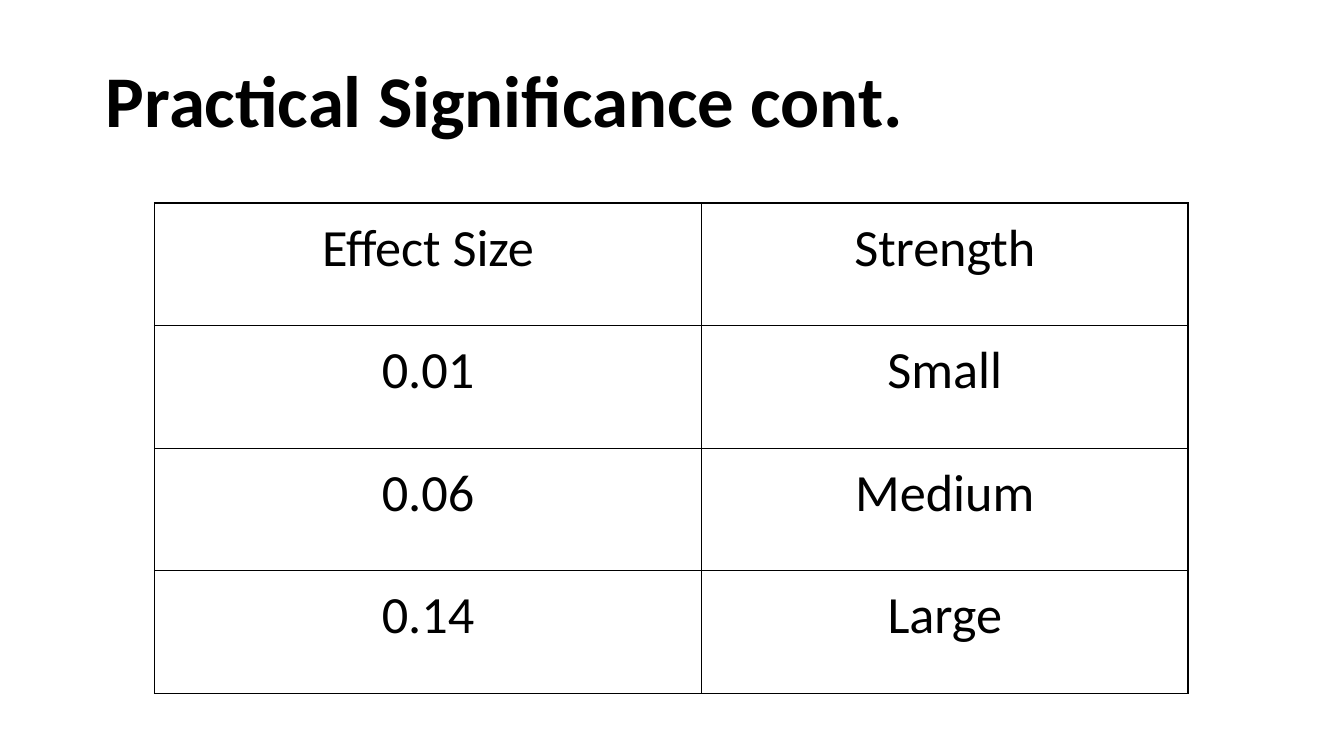
"""Build the slide with the table of effect sizes and their strength."""
import pptx
import pptx.dml.color
import pptx.enum.text
import pptx.oxml
import pptx.oxml.ns
import pptx.util

COLORS = {"text": "000000", "border": "000000", "cell": "FFFFFF"}
ROWS = [
    ("Effect Size", "Strength"),
    ("0.01", "Small"),
    ("0.06", "Medium"),
    ("0.14", "Large"),
]


def rgb(name):
    return pptx.dml.color.RGBColor.from_string(COLORS[name])


class Deck:
    def __init__(self, width, height, columns, font):
        self.prs = pptx.Presentation()
        self.prs.slide_width = pptx.util.Inches(width)
        self.prs.slide_height = pptx.util.Inches(height)
        self.unit = self.prs.slide_width / columns
        self.font = font
        self.s = self.prs.slides.add_slide(self.prs.slide_layouts[6])

    def grid(self, *lengths):
        return [round(length * self.unit) for length in lengths]

    def style(self, p, size, bold=False):
        for r in p.runs:
            r.font.name = self.font
            r.font.size = pptx.util.Pt(size)
            r.font.bold = bold
            r.font.color.rgb = rgb("text")

    def title(self, text, area, size):
        tf = self.s.shapes.add_textbox(*self.grid(*area)).text_frame
        tf.word_wrap = True
        tf.vertical_anchor = pptx.enum.text.MSO_ANCHOR.MIDDLE
        tf.text = text
        p = tf.paragraphs[0]
        p.line_spacing = 0.9
        p.space_after = pptx.util.Pt(6)
        self.style(p, size, bold=True)

    def border(self, cell, side, points):
        tcPr = cell._tc.get_or_add_tcPr()
        tcPr.append(pptx.oxml.parse_xml(
            f'<a:ln{side} {pptx.oxml.ns.nsdecls("a")} w="{pptx.util.Pt(points)}">'
            f'<a:solidFill><a:srgbClr val="{COLORS["border"]}"/></a:solidFill>'
            f'</a:ln{side}>'))

    def cell(self, cell, text, size):
        cell.margin_left = cell.margin_right = pptx.util.Inches(0.21)
        cell.margin_top = cell.margin_bottom = pptx.util.Inches(0.1)
        for side in "LRTB":
            self.border(cell, side, 0.75)
        cell.fill.solid()
        cell.fill.fore_color.rgb = rgb("cell")
        p = cell.text_frame.paragraphs[0]
        p.text = text
        p.alignment = pptx.enum.text.PP_ALIGN.CENTER
        self.style(p, size)

    def table(self, rows, area, widths, size):
        shape = self.s.shapes.add_table(len(rows), len(widths), *self.grid(*area))
        table = shape.table
        for column, width in zip(table.columns, self.grid(*widths)):
            column.width = width
        for i, row in enumerate(rows):
            for j, text in enumerate(row):
                self.cell(table.cell(i, j), text, size)

    def save(self):
        self.prs.save("out.pptx")


def main():
    deck = Deck(10, 10 * 9 / 16, 100, "Calibri")
    deck.title("Practical Significance cont.", (6.9, 1.5, 86.2, 12.4), 39)
    deck.table(ROWS, (11.5, 15.1, 76.9, 36.5), (40.7, 36.2), 28)
    deck.save()


if __name__ == "__main__":
    main()
